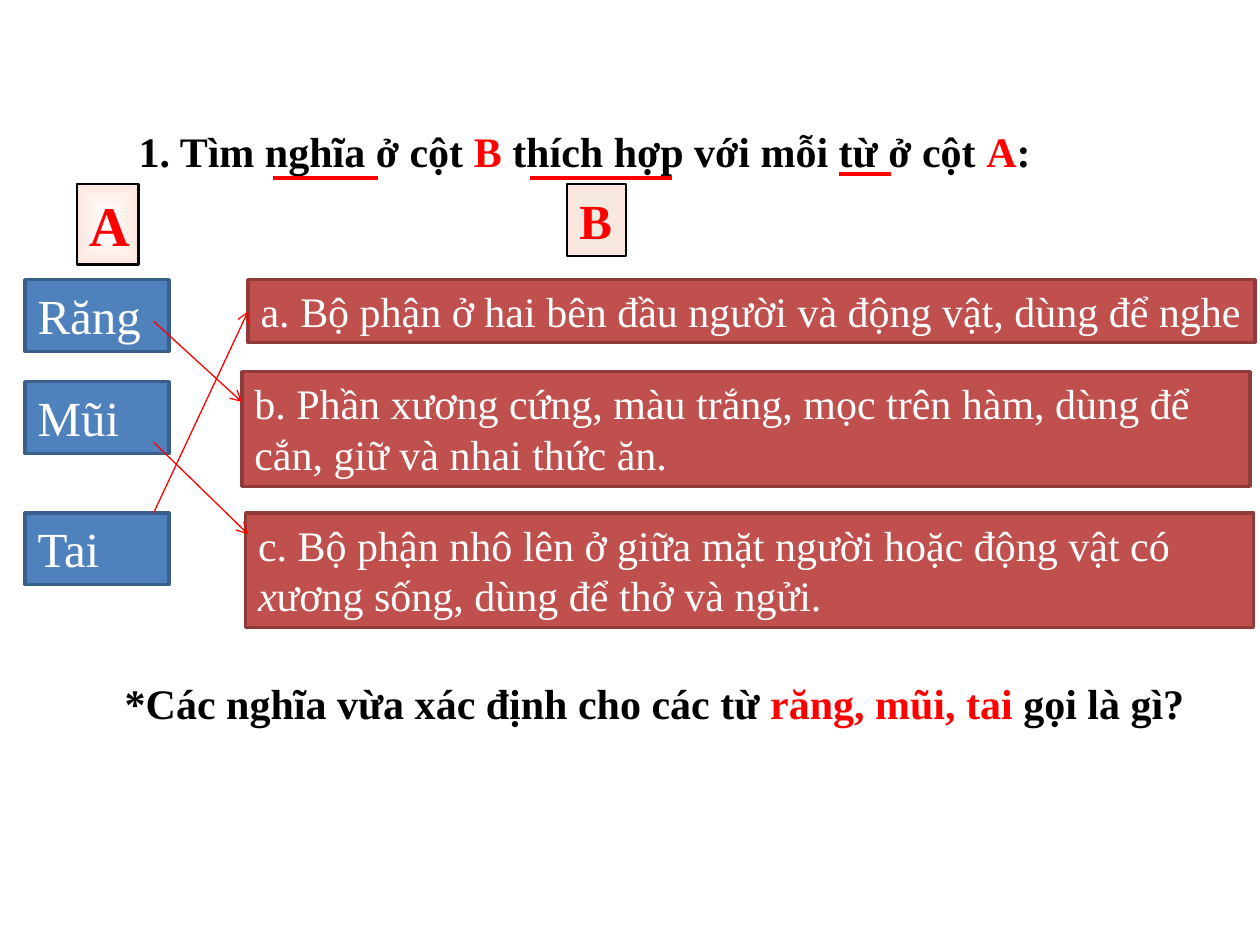
import pptx
import pptx.util
import pptx.dml.color
import pptx.enum.shapes
import pptx.enum.text
import pptx.oxml.ns
from lxml import etree

RGBColor = pptx.dml.color.RGBColor
RED = RGBColor(0xFF, 0x00, 0x00)
BLACK = RGBColor(0x00, 0x00, 0x00)
WHITE = RGBColor(0xFF, 0xFF, 0xFF)
BLUE = RGBColor(0x4F, 0x81, 0xBD)
BLUE_EDGE = RGBColor(0x3A, 0x5F, 0x8C)
BRICK = RGBColor(0xC0, 0x50, 0x4D)
BRICK_EDGE = RGBColor(0x8E, 0x3B, 0x39)
CREAM = RGBColor(0xEE, 0xEC, 0xE1)
PEACH = RGBColor(0xFD, 0xE6, 0xDF)
PX = 9144
qn = pptx.oxml.ns.qn
Pt = pptx.util.Pt


def write(sp, runs, size, bold=False, wrap=True):
    tf = sp.text_frame
    frame_format = {
        "word_wrap": wrap,
        "auto_size": pptx.enum.text.MSO_AUTO_SIZE.SHAPE_TO_FIT_TEXT,
        "vertical_anchor": pptx.enum.text.MSO_ANCHOR.TOP,
    }
    for name, value in frame_format.items():
        setattr(tf, name, value)
    p = tf.paragraphs[0]
    p.alignment = pptx.enum.text.PP_ALIGN.LEFT
    for text, color, italic in runs:
        r = p.add_run()
        r.text = text
        run_format = {"name": "Times New Roman", "size": Pt(size), "bold": bold, "italic": italic}
        for name, value in run_format.items():
            setattr(r.font, name, value)
        r.font.color.rgb = color


def add_line(s, ends, width):
    line = s.shapes.add_connector(
        pptx.enum.shapes.MSO_CONNECTOR.STRAIGHT, *[v * PX for v in ends])
    line.line.color.rgb = RED
    line.line.width = Pt(width)
    etree.SubElement(line._element.spPr, qn("a:effectLst"))
    return line


prs = pptx.Presentation()
prs.slide_width = 1000 * PX
prs.slide_height = 750 * PX
s = prs.slides.add_slide(prs.slide_layouts[6])

headers = [
    ("A", (61, 146, 49, 64), 32, WHITE, 1.5),
    ("B", (450, 146, 47, 57), 28, CREAM, 1),
]
for text, box, size, center, width in headers:
    sp = s.shapes.add_shape(pptx.enum.shapes.MSO_SHAPE.RECTANGLE, *[v * PX for v in box])
    sp.shadow.inherit = False
    sp.fill.gradient()
    for stop, color in zip(sp.fill.gradient_stops, (center, PEACH)):
        stop.color.rgb = color
    grad = sp._element.spPr.find(qn("a:gradFill"))
    grad.remove(grad.find(qn("a:lin")))
    shade = etree.Element(qn("a:path"), {"path": "shape"})
    grad.find(qn("a:gsLst")).addnext(shade)
    etree.SubElement(shade, qn("a:fillToRect"), {side: "50000" for side in "ltrb"})
    sp.line.color.rgb = BLACK
    sp.line.width = Pt(width)
    write(sp, [(text, RED, False)], size, bold=True)

words = [("Răng", 222), ("Mũi", 303), ("Tai", 407)]
meanings = [
    ((197, 222, 799, 50), [("a. Bộ phận ở hai bên đầu người và động vật, dùng để nghe", WHITE, False)]),
    ((192, 295, 800, 91), [("b. Phần xương cứng, màu trắng, mọc trên hàm, dùng để cắn, giữ và nhai thức ăn.", WHITE, False)]),
    ((195, 407, 800, 91), [
        ("c. Bộ phận nhô lên ở giữa mặt người hoặc động vật có ", WHITE, False),
        ("x", WHITE, True),
        ("ương sống, dùng để thở và ngửi.", WHITE, False),
    ]),
]
cards = [((20, top, 114, 57), [(text, WHITE, False)], 28, BLUE, BLUE_EDGE) for text, top in words]
cards += [(box, runs, 24, BRICK, BRICK_EDGE) for box, runs in meanings]
shapes = []
for box, runs, size, fill, edge in cards:
    sp = s.shapes.add_shape(pptx.enum.shapes.MSO_SHAPE.RECTANGLE, *[v * PX for v in box])
    sp.shadow.inherit = False
    sp.fill.solid()
    sp.fill.fore_color.rgb = fill
    sp.line.color.rgb = edge
    sp.line.width = Pt(2)
    write(sp, runs, size, wrap=box[3] != 50)
    shapes.append(sp)

arrows = [(122, 255, 192, 319), (122, 351, 197, 424), (122, 407, 197, 247)]
for ends in arrows:
    line = add_line(s, ends, 0.75)
    etree.SubElement(line.line._get_or_add_ln(), qn("a:tailEnd"), {"type": "arrow"})
line.end_connect(shapes[3], 1)

texts = [
    ((31, 533, 969, 50), 68, [
        ("*Các nghĩa vừa xác định cho các từ ", BLACK, False),
        ("răng, mũi, tai ", RED, False),
        ("gọi là gì?", BLACK, False),
    ]),
    ((58, 95, 831, 51), 52, [
        ("1. Tìm nghĩa ở cột ", BLACK, False),
        ("B ", RED, False),
        ("thích hợp với mỗi từ ở cột ", BLACK, False),
        ("A", RED, False),
        (":", BLACK, False),
    ]),
]
for box, margin, runs in texts:
    sp = s.shapes.add_textbox(*[v * PX for v in box])
    sp.text_frame.margin_left = margin * PX
    write(sp, runs, 24, bold=True)

for left, right, y in [(217, 300, 141), (421, 533, 141), (666, 707, 138)]:
    add_line(s, (left, y, right, y), 2.25)

prs.save("out.pptx")
